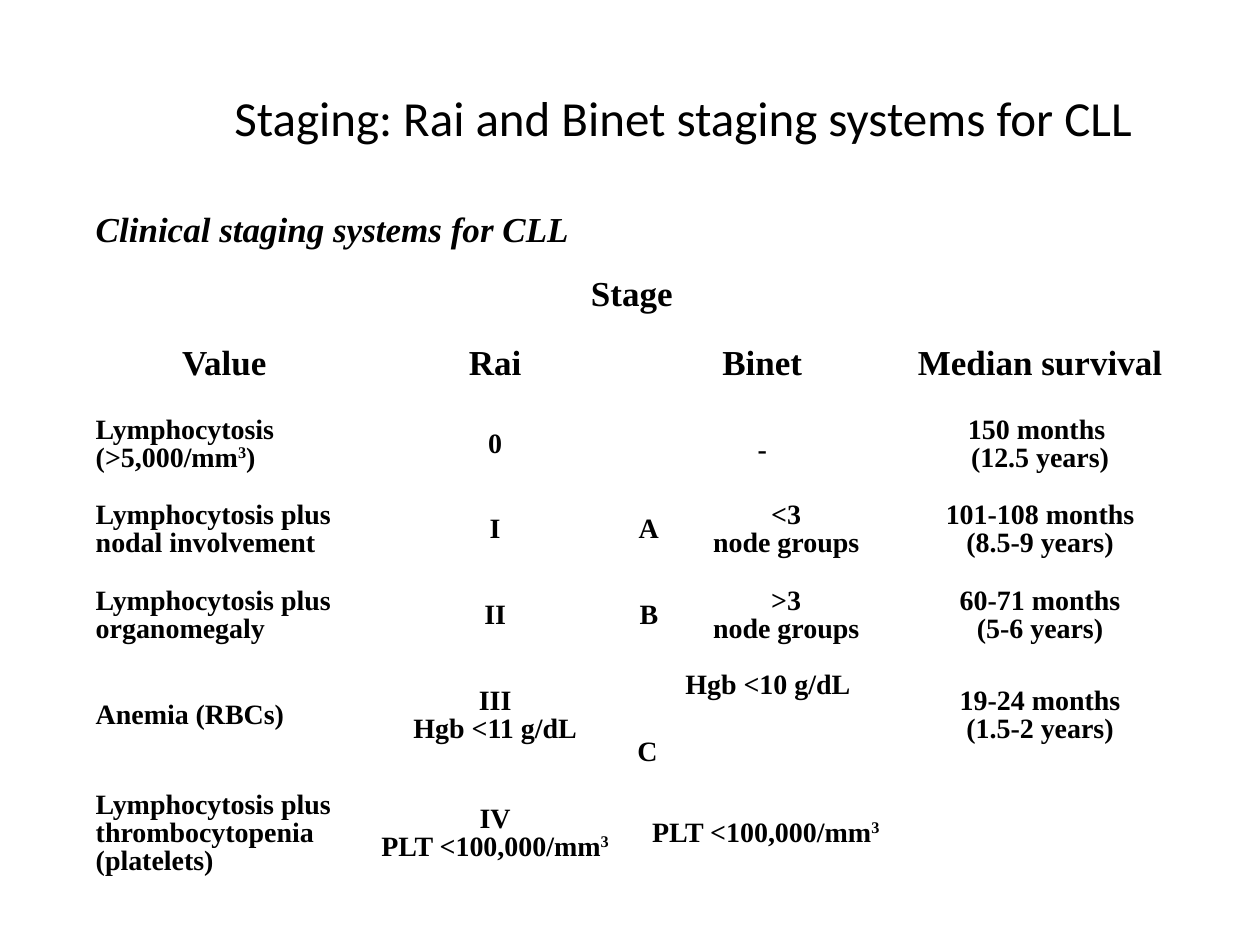
from dataclasses import dataclass

from lxml import etree
from pptx import Presentation
from pptx.dml.color import RGBColor
from pptx.enum.text import MSO_ANCHOR, PP_ALIGN
from pptx.oxml.ns import qn
from pptx.slide import Slide
from pptx.util import Inches, Pt

LEFT, CENTER = PP_ALIGN.LEFT, PP_ALIGN.CENTER
MIDDLE, BOTTOM = MSO_ANCHOR.MIDDLE, MSO_ANCHOR.BOTTOM

COLUMN_WIDTHS = [2.24, 2.06, 0.38, 1.8, 2.23]
ROW_HEIGHTS = [0.52, 0.5, 0.59, 0.68, 0.68, 0.68, 0.91, 0.96]
HEADER_ROWS = 3
MERGES = [(0, 0, 4), (1, 0, 4), (2, 2, 3), (3, 2, 3), (7, 2, 3)]
STAGING = [
    ["Clinical staging systems for CLL", "", "", "", ""],
    ["Stage", "", "", "", ""],
    ["Value", "Rai", "Binet", "", "Median survival"],
    ["Lymphocytosis (>5,000/mm^3^)", "0", "-", "", "150 months \n(12.5 years)"],
    ["Lymphocytosis plus nodal involvement", "I", "A", "<3\nnode groups",
     "101-108 months\n(8.5-9 years)"],
    ["Lymphocytosis plus organomegaly", "II", "B", ">3\nnode groups",
     "60-71 months\n(5-6 years)"],
    ["Anemia (RBCs)", "III\nHgb <11 g/dL", "C", "Hgb <10 g/dL",
     "19-24 months\n(1.5-2 years)"],
    ["Lymphocytosis plus thrombocytopenia\n(platelets)",
     "IV\nPLT <100,000/mm^3^", " PLT <100,000/mm^3^", "", ""],
]


def color(value):
    return RGBColor.from_string(value)


@dataclass
class Page:
    slide: Slide
    title_font: str = "Calibri"
    table_font: str = "Times New Roman"
    ink: str = "000000"
    line: str = "FFFFFF"

    def fill_text(self, paragraph, text, font, size, align=CENTER, bold=False):
        paragraph.alignment = align
        paragraph.font.name = font
        paragraph.font.size = Pt(size)
        paragraph.font.bold = bold
        paragraph.font.color.rgb = color(self.ink)
        for number, row in enumerate(text.split("\n")):
            if number:
                paragraph.add_line_break()
            for index, part in enumerate(row.split("^")):
                if part:
                    span = paragraph.add_run()
                    span.text = part
                    if index % 2:
                        span.font._element.set("baseline", "30000")

    def title(self, text, left, top, width, height):
        box = self.slide.shapes.add_textbox(
            Inches(left), Inches(top), Inches(width), Inches(height))
        frame = box.text_frame
        frame.word_wrap = True
        frame.vertical_anchor = MIDDLE
        self.fill_text(frame.paragraphs[0], text, self.title_font, 28)

    def borders(self, cell):
        properties = cell._tc.get_or_add_tcPr()
        for position, side in enumerate(("a:lnL", "a:lnR", "a:lnT", "a:lnB")):
            edge = etree.Element(qn(side), w=str(Pt(1)))
            fill = etree.SubElement(edge, qn("a:solidFill"))
            etree.SubElement(fill, qn("a:srgbClr"), val=self.line)
            properties.insert(position, edge)

    def table(self, rows, left, top):
        table = self.slide.shapes.add_table(
            len(rows), len(COLUMN_WIDTHS), Inches(left), Inches(top),
            Inches(sum(COLUMN_WIDTHS)), Inches(sum(ROW_HEIGHTS))).table
        table.first_row = table.horz_banding = False
        for column, width in zip(table.columns, COLUMN_WIDTHS):
            column.width = Inches(width)
        for row, height in zip(table.rows, ROW_HEIGHTS):
            row.height = Inches(height)
        for row, first, last in MERGES:
            table.cell(row, first).merge(table.cell(row, last))
        for row, texts in enumerate(rows):
            for column, text in enumerate(texts):
                cell = table.cell(row, column)
                cell.fill.background()
                self.borders(cell)
                cell.vertical_anchor = MIDDLE
                paragraph = cell.text_frame.paragraphs[0]
                paragraph.line_spacing = 0.9
                is_label = column == 0 and row not in (1, 2)
                self.fill_text(paragraph, text, self.table_font,
                               20 if row < HEADER_ROWS else 16,
                               LEFT if is_label else CENTER, True)
        return table


def main():
    deck = Presentation()
    deck.slide_width, deck.slide_height = Inches(10), Inches(7.5)
    page = Page(deck.slides.add_slide(deck.slide_layouts[6]))
    page.title("Staging: Rai and Binet staging systems for CLL",
               0.66, 0.51, 9.52, 0.83)
    table = page.table(STAGING, 0.66, 1.58)
    table.cell(0, 0).text_frame.paragraphs[0].font.italic = True
    table.cell(3, 2).text_frame.paragraphs[0].line_spacing = 1.35
    stage_c, hemoglobin = table.cell(6, 2), table.cell(6, 3)
    stage_c.vertical_anchor = BOTTOM
    hemoglobin.margin_bottom = Inches(0.53)
    for cell in (stage_c, hemoglobin):
        cell.text_frame.paragraphs[0].alignment = LEFT
    deck.save("out.pptx")


if __name__ == "__main__":
    main()
